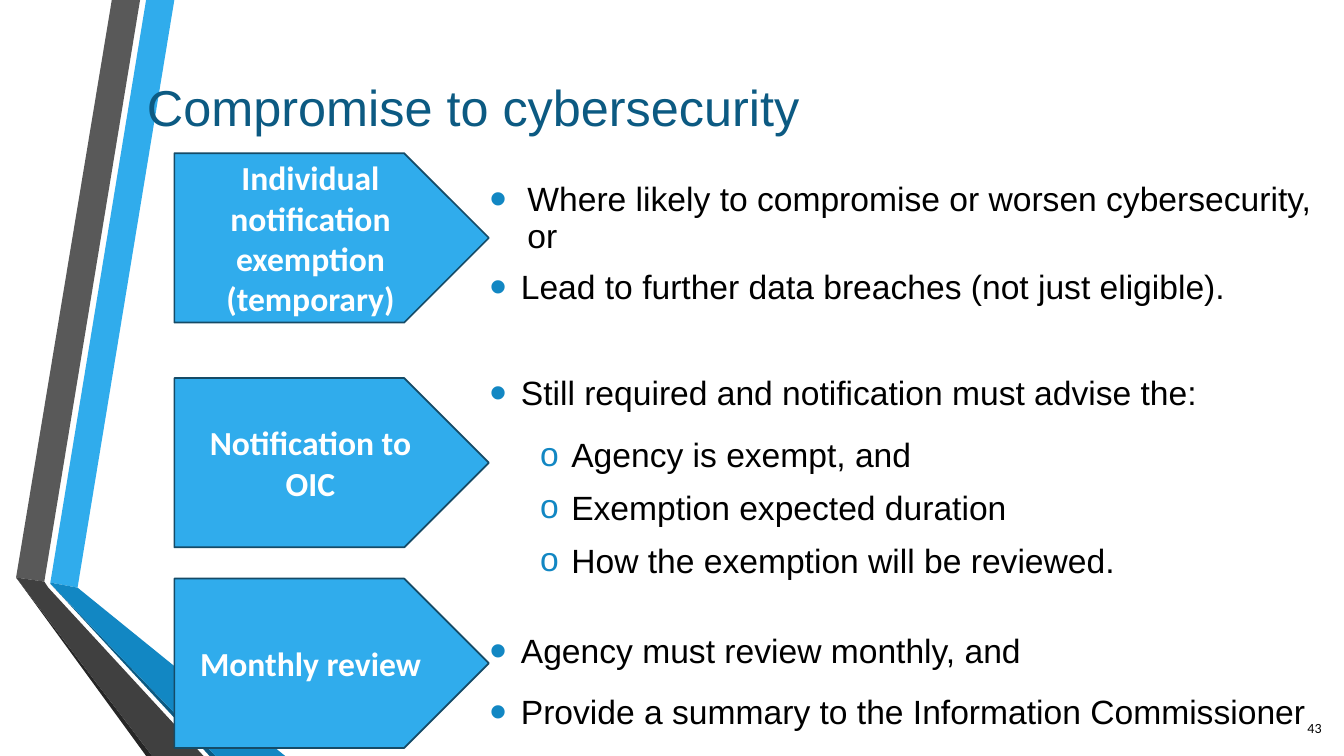
from lxml import etree
from pptx import Presentation
from pptx import util as u
from pptx.dml import color
from pptx.enum import shapes, text
from pptx.oxml import ns

COLORS = {
    "sky": "30ACEC", "blue": "1287C3", "navy": "0C5A82", "outline": "154B67",
    "gray": "595959", "dark": "404040", "shade": "262626",
    "black": "000000", "white": "FFFFFF",
}

RIBBONS = [
    ("sky", [(36, 416.16), (55.44, 419.76), (124.56, 0), (104.4, 0)]),
    ("gray", [(100.08, 0), (79.92, 0), (11.52, 412.56), (31.68, 415.44)]),
    ("shade", [(11.52, 412.56), (104.4, 540), (108.72, 540)]),
    ("navy", [(36, 416.88), (149.76, 540), (154.08, 540)]),
    ("blue", [(36, 416.88), (154.08, 540), (203.76, 540), (55.44, 419.76), (36, 416.16)]),
    ("dark", [(145.44, 540), (34.56, 419.76), (31.68, 415.44), (11.52, 412.56), (108.72, 540)]),
]

ARROWS = [
    (109.44, "Individual notification exemption (temporary)"),
    (270, "Notification to OIC"),
    (413.28, "Monthly review"),
]

MAIN = ("•", 22.32, 22.32, 145)
FIRST = ("•", 27, 27, 145)
SUB = ("o", 58.32, 22.32, 100)
POINTS = [
    ("Where likely to compromise or worsen cybersecurity, or", FIRST, 0),
    ("Lead to further data breaches (not just eligible).", MAIN, 11),
    ("Still required and notification must advise the:", MAIN, 50),
    ("Agency is exempt, and", SUB, 18),
    ("Exemption expected duration", SUB, 11.8),
    ("How the exemption will be reviewed.", SUB, 11.8),
    ("Agency must review monthly, and", MAIN, 38.6),
    ("Provide a summary to the Information Commissioner", MAIN, 17.5),
]


class SlideBuilder:
    """Holds the style and the current slide, and draws each kind of element."""

    def __init__(self, deck, page):
        self.deck = deck
        self.page = page

    def rgb(self, name):
        return color.RGBColor.from_string(COLORS[name])

    def ribbon(self, fill, corners):
        points = [(u.Pt(x), u.Pt(y)) for x, y in corners]
        outline = self.page.shapes.build_freeform(*points[0], scale=1.0)
        outline.add_line_segments(points[1:], close=True)
        band = outline.convert_to_shape()
        band.shadow.inherit = False
        band.fill.solid()
        band.fill.fore_color.rgb = self.rgb(fill)
        band.line.fill.background()

    def style(self, para, size, font, tint, bold=False):
        for span in para.runs:
            span.font.size = u.Pt(size)
            span.font.name = font
            span.font.bold = bold
            span.font.color.rgb = self.rgb(tint)

    def text_box(self, left, top, width, height, anchor=text.MSO_ANCHOR.MIDDLE):
        box = self.page.shapes.add_textbox(u.Pt(left), u.Pt(top), u.Pt(width), u.Pt(height))
        box.text_frame.word_wrap = True
        box.text_frame.vertical_anchor = anchor
        return box

    def label(self, content, frame, size, font, tint, align=text.PP_ALIGN.LEFT):
        box = self.text_box(*frame)
        box.text_frame.text = content
        para = box.text_frame.paragraphs[0]
        para.alignment = align
        self.style(para, size, font, tint)

    def arrow(self, top, content):
        box = self.page.shapes.add_shape(
            shapes.MSO_SHAPE.PENTAGON, u.Pt(124.56), u.Pt(top), u.Pt(224.64), u.Pt(120.96))
        box.shadow.inherit = False
        box.fill.solid()
        box.fill.fore_color.rgb = self.rgb("sky")
        box.line.color.rgb = self.rgb("outline")
        box.line.width = u.Pt(1.25)
        box.text_frame.word_wrap = True
        box.text_frame.vertical_anchor = text.MSO_ANCHOR.MIDDLE
        box.text_frame.text = content
        para = box.text_frame.paragraphs[0]
        para.alignment = text.PP_ALIGN.CENTER
        self.style(para, 24, "Calibri", "white", bold=True)

    def bullet(self, para, mark, indent, hanging, percent):
        props = para._p.get_or_add_pPr()
        props.set("marL", str(u.Pt(indent)))
        props.set("indent", str(-u.Pt(hanging)))
        tint = etree.SubElement(props, ns.qn("a:buClr"))
        etree.SubElement(tint, ns.qn("a:srgbClr"), val=COLORS["blue"])
        etree.SubElement(props, ns.qn("a:buSzPct"), val=str(percent * 1000))
        etree.SubElement(props, ns.qn("a:buFont"), typeface="Arial")
        etree.SubElement(props, ns.qn("a:buChar"), char=mark)

    def bullet_list(self, points, frame):
        box = self.text_box(*frame, anchor=text.MSO_ANCHOR.TOP)
        for index, (content, marker, gap) in enumerate(points):
            para = box.text_frame.paragraphs[0] if index == 0 else box.text_frame.add_paragraph()
            para.text = content
            self.bullet(para, *marker)
            para.line_spacing = 0.9
            para.space_before = u.Pt(gap)
            self.style(para, 24, "Arial", "black")


def main():
    deck = Presentation()
    deck.slide_width, deck.slide_height = u.Pt(960), u.Pt(540)
    page = deck.slides.add_slide(deck.slide_layouts[6])
    builder = SlideBuilder(deck, page)
    for fill, corners in RIBBONS:
        builder.ribbon(fill, corners)
    builder.label("Compromise to cybersecurity", (97.92, 51.12, 694.8, 50.4), 36, "Arial", "navy")
    builder.bullet_list(POINTS, (342.72, 127, 601.92, 410))
    builder.label("43", (907.92, 505.44, 43.2, 28.8), 10, "Calibri", "black", text.PP_ALIGN.RIGHT)
    for top, content in ARROWS:
        builder.arrow(top, content)
    deck.save("out.pptx")


if __name__ == "__main__":
    main()
